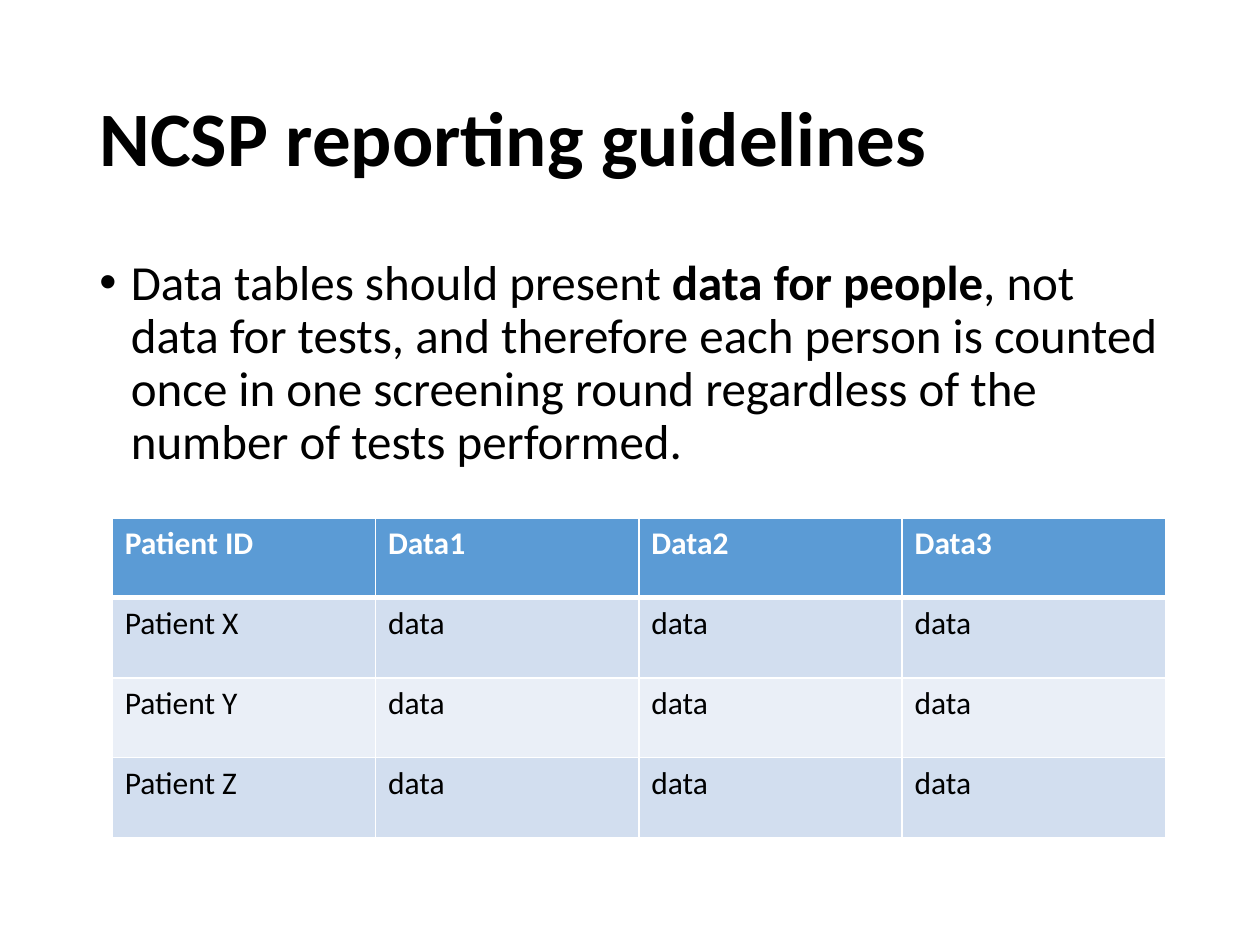
from dataclasses import dataclass

from lxml.etree import SubElement
from pptx import Presentation
from pptx.dml.color import RGBColor
from pptx.enum.text import MSO_ANCHOR as Anchor, MSO_AUTO_SIZE as AutoSize, PP_ALIGN as Align
from pptx.oxml.ns import qn
from pptx.util import Inches, Pt

COLORS = {
    "paper": "FFFFFF",
    "ink": "000000",
    "header": "5B9BD5",
    "band_dark": "D2DEEF",
    "band_light": "EAEFF7",
}
FONT = "Calibri"
THIN, THICK = 1, 3


@dataclass
class TableRow:
    labels: list[str]
    fill: str
    color: str = "ink"
    bold: bool = False
    top: int = THIN
    bottom: int = THIN


ROWS = [
    TableRow(["Patient ID", "Data1", "Data2", "Data3"], "header", "paper", True, bottom=THICK),
    TableRow(["Patient X"] + ["data"] * 3, "band_dark", top=THICK),
    TableRow(["Patient Y"] + ["data"] * 3, "band_light"),
    TableRow(["Patient Z"] + ["data"] * 3, "band_dark"),
]


def add_text(paragraph, text: str, *, size: int, color: str = "ink", bold: bool = False) -> None:
    run = paragraph.add_run()
    run.text = text
    run.font.name = FONT
    run.font.size = Pt(size)
    run.font.bold = bold
    run.font.color.rgb = RGBColor.from_string(COLORS[color])


def add_bullet(paragraph, indent: float) -> None:
    properties = paragraph._p.get_or_add_pPr()
    properties.set("marL", str(Inches(indent)))
    properties.set("indent", str(-Inches(indent)))
    SubElement(properties, qn("a:buFont"), typeface="Arial")
    SubElement(properties, qn("a:buChar"), char="•")


def add_border(cell, side: str, width: int) -> None:
    line = SubElement(cell._tc.get_or_add_tcPr(), qn(f"a:ln{side}"), w=str(Pt(width)))
    fill = SubElement(line, qn("a:solidFill"))
    SubElement(fill, qn("a:srgbClr"), val=COLORS["paper"])


def fill_row(cells, row: TableRow) -> None:
    borders = {"L": THIN, "R": THIN, "T": row.top, "B": row.bottom}
    for cell, label in zip(cells, row.labels):
        for side, width in borders.items():
            add_border(cell, side, width)
        cell.fill.solid()
        cell.fill.fore_color.rgb = RGBColor.from_string(COLORS[row.fill])
        add_text(cell.text_frame.paragraphs[0], label, size=18, color=row.color, bold=row.bold)


def add_heading(slide) -> None:
    title = slide.shapes.title
    title.left, title.top = Inches(0.69), Inches(0.4)
    title.width, title.height = Inches(8.62), Inches(1.45)
    frame = title.text_frame
    frame.auto_size = AutoSize.NONE
    frame.vertical_anchor = Anchor.MIDDLE
    heading = frame.paragraphs[0]
    heading.alignment = Align.LEFT
    heading.line_spacing = 0.9
    add_text(heading, "NCSP reporting guidelines", size=44, bold=True)


def add_guideline(slide) -> None:
    body = slide.shapes.add_textbox(Inches(0.69), Inches(2), Inches(8.62), Inches(4.76))
    body.text_frame.word_wrap = True
    guideline = body.text_frame.paragraphs[0]
    guideline.line_spacing = 0.9
    guideline.space_before = Pt(10)
    add_bullet(guideline, 0.25)
    add_text(guideline, "Data tables should present ", size=28)
    add_text(guideline, "data for people", size=28, bold=True)
    add_text(
        guideline,
        ", not data for tests, and therefore each person is counted once in one "
        "screening round regardless of the number of tests performed.",
        size=28,
    )


def add_patient_table(slide) -> None:
    table = slide.shapes.add_table(
        len(ROWS), len(ROWS[0].labels), Inches(0.89), Inches(4.11), Inches(8.36), Inches(2.54)
    ).table
    for table_row, row in zip(table.rows, ROWS):
        fill_row(table_row.cells, row)


def main() -> None:
    deck = Presentation()
    deck.slide_width, deck.slide_height = Inches(10), Inches(7.5)
    slide = deck.slides.add_slide(deck.slide_layouts.get_by_name("Title Only"))
    add_heading(slide)
    add_guideline(slide)
    add_patient_table(slide)
    deck.save("out.pptx")


if __name__ == "__main__":
    main()
